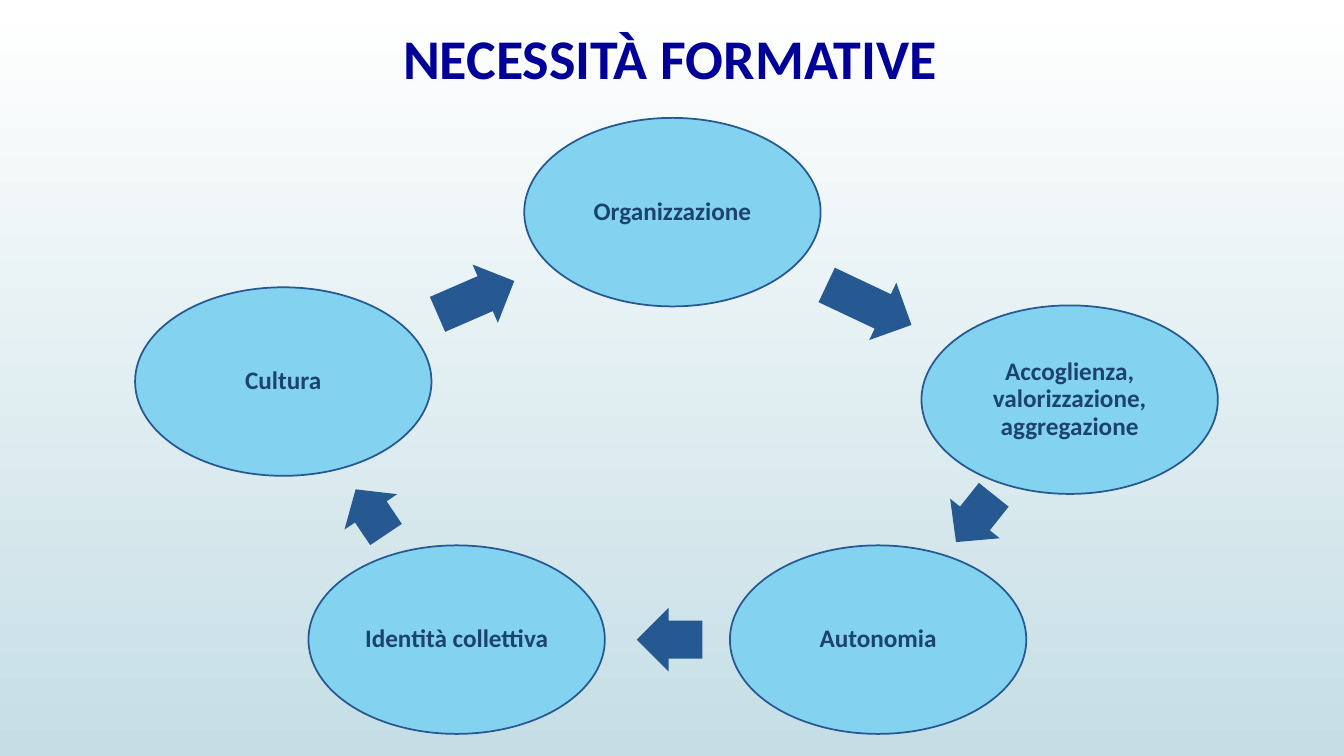
import math

import pptx
import pptx.dml.color
import pptx.enum.shapes
import pptx.enum.text
import pptx.util

COLORS = {
    "sky_top": "FFFFFF",
    "sky_bottom": "C5DEE5",
    "stage": "83D2F0",
    "edge": "265991",
    "label": "1C436D",
    "title": "000099",
}
FONT = "Calibri"
SLIDE_WIDTH = pptx.util.Inches(13.33)
SLIDE_HEIGHT = pptx.util.Inches(7.5)
GRID = 100

# Stage label, centre column and row, columns taken by the arrow that follows
STAGES = [
    ("Organizzazione", 49.63, 15.3, 8.66),
    ("Accoglienza, valorizzazione, aggregazione", 86.31, 45.74, 5.59),
    ("Autonomia", 68.62, 84.7, 6.05),
    ("Identità collettiva", 29.7, 84.7, 5.03),
    ("Cultura", 13.69, 42.8, 7.73),
]
STAGE_COLUMNS, STAGE_ROWS = 27.37, 30.61
ARROW_ROWS = 10.31
ARROW_SHARE = 0.495


def color(key):
    """Return the named colour."""
    return pptx.dml.color.RGBColor.from_string(COLORS[key])


def region(column, row, columns, rows):
    """Return a box in EMU from cells of the slide grid."""
    return (int(SLIDE_WIDTH * column / GRID), int(SLIDE_HEIGHT * row / GRID),
            int(SLIDE_WIDTH * columns / GRID), int(SLIDE_HEIGHT * rows / GRID))


def add_bold_run(paragraph, text, size, color_key):
    """Add one bold run to a paragraph."""
    run = paragraph.add_run()
    run.text = text
    run.font.name = FONT
    run.font.size = pptx.util.Pt(size)
    run.font.bold = True
    run.font.color.rgb = color(color_key)


def paint_background(slide):
    """Fill the slide with a gradient from top to bottom."""
    fill = slide.background.fill
    fill.gradient()
    fill.gradient_angle = 270
    for stop, key in zip(fill.gradient_stops, ("sky_top", "sky_bottom")):
        stop.color.rgb = color(key)


def add_title(slide, box):
    """Place the heading in its box."""
    frame = slide.shapes.add_textbox(*box).text_frame
    frame.word_wrap = True
    frame.auto_size = pptx.enum.text.MSO_AUTO_SIZE.SHAPE_TO_FIT_TEXT
    add_bold_run(frame.paragraphs[0], "NECESSITÀ FORMATIVE", 40, "title")


def add_centred(slide, kind, centre, width, height, fill_key):
    """Add a filled shape around a centre point."""
    x, y = centre
    shape = slide.shapes.add_shape(
        kind, int(x - width / 2), int(y - height / 2), int(width), int(height))
    shape.shadow.inherit = False
    shape.fill.solid()
    shape.fill.fore_color.rgb = color(fill_key)
    return shape


def add_stage(slide, label, centre, width, height):
    """Add one labelled ellipse of the cycle."""
    stage = add_centred(slide, pptx.enum.shapes.MSO_SHAPE.OVAL,
                        centre, width, height, "stage")
    stage.line.color.rgb = color("edge")
    stage.line.width = pptx.util.Pt(1.25)
    frame = stage.text_frame
    frame.word_wrap = True
    frame.vertical_anchor = pptx.enum.text.MSO_ANCHOR.MIDDLE
    frame.margin_left = frame.margin_right = pptx.util.Inches(0.03)
    frame.margin_top = frame.margin_bottom = pptx.util.Inches(0.03)
    paragraph = frame.paragraphs[0]
    paragraph.alignment = pptx.enum.text.PP_ALIGN.CENTER
    paragraph.line_spacing = 0.9
    add_bold_run(paragraph, label, 18, "label")


def add_arrow(slide, start, end, length, thickness):
    """Add a block arrow on the line between two stage centres."""
    dx, dy = end[0] - start[0], end[1] - start[1]
    centre = (start[0] + dx * ARROW_SHARE, start[1] + dy * ARROW_SHARE)
    arrow = add_centred(slide, pptx.enum.shapes.MSO_SHAPE.RIGHT_ARROW,
                        centre, length, thickness, "edge")
    arrow.line.fill.background()
    arrow.adjustments[0] = 0.6
    arrow.adjustments[1] = 0.5
    arrow.rotation = math.degrees(math.atan2(dy, dx)) % 360


def add_cycle(slide, box):
    """Place the stages and the arrows between them in the box."""
    left, top, width, height = box
    column, row = width / GRID, height / GRID
    centres = [(left + x * column, top + y * row) for _, x, y, _ in STAGES]
    following = centres[1:] + centres[:1]
    for (label, _, _, length), centre, target in zip(STAGES, centres, following):
        add_stage(slide, label, centre, STAGE_COLUMNS * column, STAGE_ROWS * row)
        add_arrow(slide, centre, target, length * column, ARROW_ROWS * row)


def main():
    """Build and save the slide."""
    deck = pptx.Presentation()
    deck.slide_width, deck.slide_height = SLIDE_WIDTH, SLIDE_HEIGHT
    slide = deck.slides.add_slide(deck.slide_layouts[6])
    paint_background(slide)
    add_cycle(slide, region(10.05, 15.6, 80.57, 81.47))
    add_title(slide, region(29.26, 2.4, 41.49, 10.27))
    deck.save("out.pptx")


if __name__ == "__main__":
    main()
